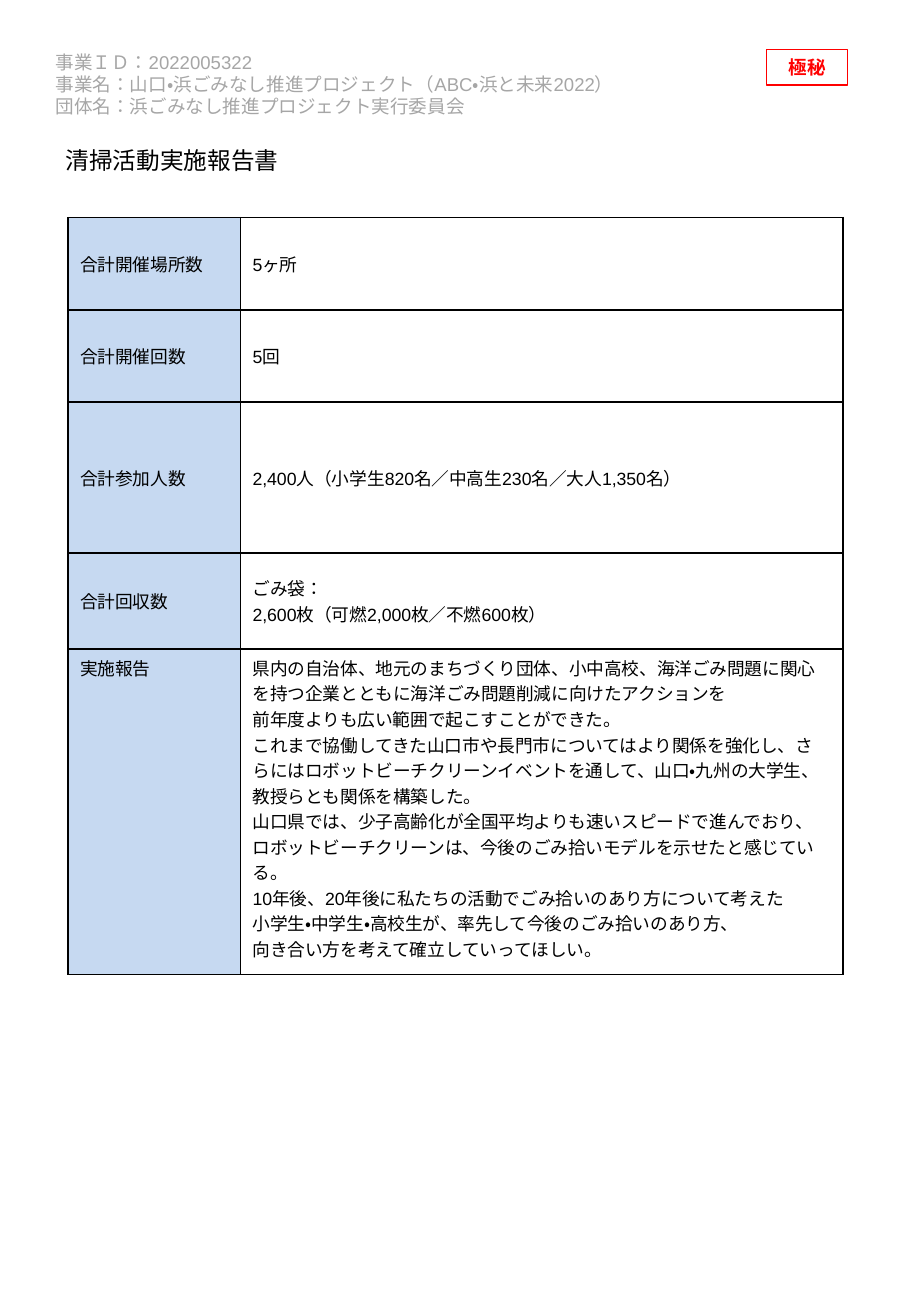
from lxml.etree import SubElement
from pptx import Presentation
from pptx.dml.color import RGBColor
from pptx.enum.lang import MSO_LANGUAGE_ID
from pptx.enum.shapes import MSO_SHAPE
from pptx.enum.text import MSO_ANCHOR, PP_ALIGN
from pptx.oxml.ns import qn
from pptx.util import Inches, Pt

COLORS = {
    "black": "000000",
    "white": "FFFFFF",
    "gray": "A6A6A6",
    "red": "FF0000",
    "label": "C6D9F1",
}

PROJECT_DETAILS = """事業ＩＤ：2022005322
事業名：山口・浜ごみなし推進プロジェクト（ABC・浜と未来2022）
団体名：浜ごみなし推進プロジェクト実行委員会"""

REPORT = """県内の自治体、地元のまちづくり団体、小中高校、海洋ごみ問題に関心を持つ企業とともに海洋ごみ問題削減に向けたアクションを
前年度よりも広い範囲で起こすことができた。
これまで協働してきた山口市や長門市についてはより関係を強化し、さらにはロボットビーチクリーンイベントを通して、山口・九州の大学生、教授らとも関係を構築した。
山口県では、少子高齢化が全国平均よりも速いスピードで進んでおり、
ロボットビーチクリーンは、今後のごみ拾いモデルを示せたと感じている。
10年後、20年後に私たちの活動でごみ拾いのあり方について考えた
小学生・中学生・高校生が、率先して今後のごみ拾いのあり方、
向き合い方を考えて確立していってほしい。"""

ROWS = [
    ("合計開催場所数", "5ヶ所", 0.76, MSO_ANCHOR.MIDDLE),
    ("合計開催回数", "5回", 0.76, MSO_ANCHOR.MIDDLE),
    ("合計参加人数", "2,400人（小学生820名／中高生230名／大人1,350名）", 1.24, MSO_ANCHOR.MIDDLE),
    ("合計回収数", "ごみ袋：\n2,600枚（可燃2,000枚／不燃600枚）", 0.79, MSO_ANCHOR.MIDDLE),
    ("実施報告", REPORT, 2.68, MSO_ANCHOR.TOP),
]
COLUMN_WIDTHS = (1.42, 4.96)


def rgb(name):
    return RGBColor.from_string(COLORS[name])


def write_text(frame, text, font, size, color="black", bold=False,
               align=PP_ALIGN.LEFT, spacing=None):
    frame.text = text
    for para in frame.paragraphs:
        para.alignment = align
        para.line_spacing = spacing
        para.font.name = font
        para.font.size = Pt(size)
        para.font.bold = bold
        para.font.color.rgb = rgb(color)
        para.font.language_id = MSO_LANGUAGE_ID.JAPANESE


def place(box, left, top, width, height):
    box.left, box.top = Inches(left), Inches(top)
    box.width, box.height = Inches(width), Inches(height)


def add_title(page):
    title = page.shapes.title
    place(title, 0.44, 1.15, 1.97, 0.34)
    frame = title.text_frame
    write_text(frame, "清掃活動実施報告書", "Calibri", 14)
    frame.word_wrap = False
    frame.vertical_anchor = MSO_ANCHOR.TOP


def add_project_details(page):
    box = page.shapes.add_textbox(Inches(0.36), Inches(0.3), Inches(6.77), Inches(0.79))
    frame = box.text_frame
    frame.word_wrap = True
    frame.vertical_anchor = MSO_ANCHOR.MIDDLE
    write_text(frame, PROJECT_DETAILS, "Arial", 11, "gray", spacing=Pt(13))


def add_secret_stamp(page):
    stamp = page.shapes.add_shape(
        MSO_SHAPE.RECTANGLE, Inches(6.31), Inches(0.41), Inches(0.67), Inches(0.29))
    stamp.shadow.inherit = False
    stamp.fill.background()
    stamp.line.color.rgb = rgb("red")
    stamp.line.width = Pt(0.75)
    stamp.text_frame.vertical_anchor = MSO_ANCHOR.MIDDLE
    write_text(stamp.text_frame, "極秘", "Calibri", 11, "red", True, PP_ALIGN.CENTER)


def add_borders(cell):
    properties = cell._tc.get_or_add_tcPr()
    for index, side in enumerate(("a:lnL", "a:lnR", "a:lnT", "a:lnB")):
        line = SubElement(properties, qn(side), w=str(Pt(1)))
        fill = SubElement(line, qn("a:solidFill"))
        SubElement(fill, qn("a:srgbClr"), val=COLORS["black"])
        properties.insert(index, line)


def fill_cell(cell, text, color, anchor):
    write_text(cell.text_frame, text, "Arial", 10.5)
    cell.vertical_anchor = anchor
    cell.fill.solid()
    cell.fill.fore_color.rgb = rgb(color)
    add_borders(cell)


def add_report_table(page):
    height = sum(row[2] for row in ROWS)
    table = page.shapes.add_table(
        len(ROWS), len(COLUMN_WIDTHS), Inches(0.56), Inches(1.79),
        Inches(sum(COLUMN_WIDTHS)), Inches(height)).table
    table.first_row = False
    table.horz_banding = False
    for column, width in zip(table.columns, COLUMN_WIDTHS):
        column.width = Inches(width)
    for row, (label, value, row_height, anchor) in zip(table.rows, ROWS):
        row.height = Inches(row_height)
        fill_cell(row.cells[0], label, "label", anchor)
        fill_cell(row.cells[1], value, "white", anchor)


def main():
    deck = Presentation()
    deck.slide_width, deck.slide_height = Inches(7.5), Inches(10.83)
    page = deck.slides.add_slide(deck.slide_layouts[5])
    add_project_details(page)
    add_secret_stamp(page)
    add_report_table(page)
    add_title(page)
    deck.save("out.pptx")


if __name__ == "__main__":
    main()
